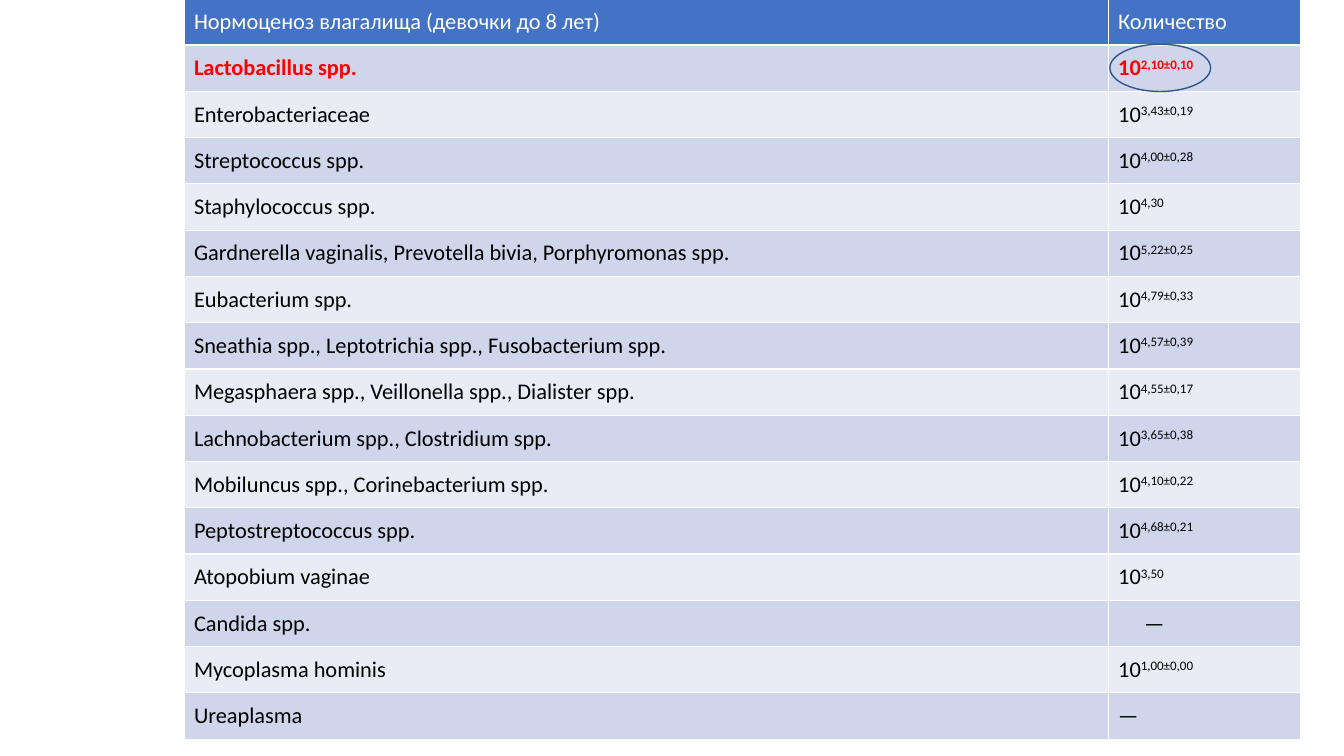
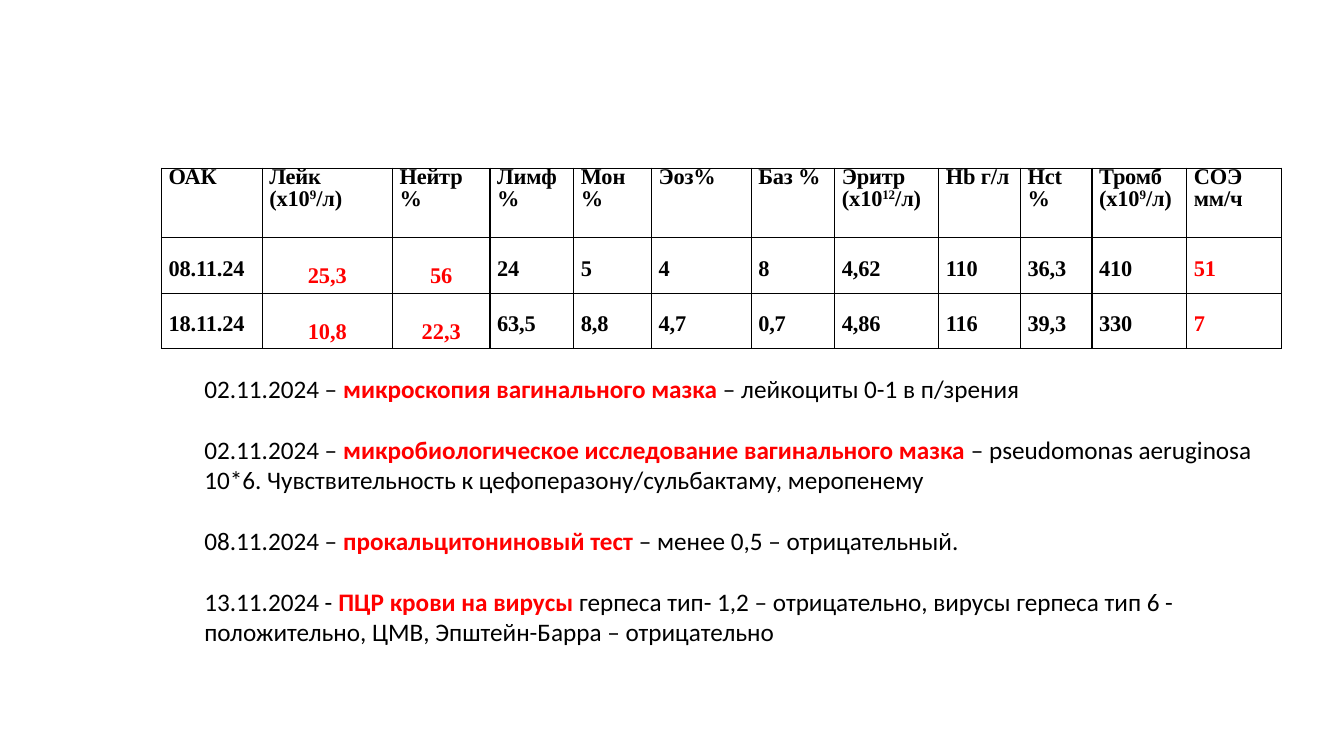
from dataclasses import dataclass

from lxml import etree
from pptx import Presentation
from pptx import util as u
from pptx.dml import color
from pptx.enum import shapes, text
from pptx.oxml import ns


@dataclass(frozen=True)
class Theme:
    """Colours, fonts and type sizes shared by the slides."""
    white: str = "FFFFFF"
    black: str = "000000"
    accent: str = "FF0000"
    header: str = "4472C4"
    bands: tuple = ("CFD5EA", "E9EBF5")
    outline: str = "325491"
    sans: str = "Calibri"
    serif: str = "Times New Roman"
    table_size: float = 16
    note_size: float = 18
    rule: float = 1


@dataclass(frozen=True)
class Box:
    """A region of the slide in centimetres."""
    left: float
    top: float
    width: float
    height: float

    def lengths(self):
        """Return the four edges as lengths."""
        return [u.Cm(side) for side in (self.left, self.top, self.width, self.height)]


THEME = Theme()
COUNT_WIDTH = 4.85
FLORA = [
    ("Lactobacillus spp.", "10^2,10±0,10"),
    ("Enterobacteriaceae", "10^3,43±0,19"),
    ("Streptococcus spp.", "10^4,00±0,28"),
    ("Staphylococcus spp.", "10^4,30"),
    ("Gardnerella vaginalis, Prevotella bivia, Porphyromonas spp.", "10^5,22±0,25"),
    ("Eubacterium spp.", "10^4,79±0,33"),
    ("Sneathia spp., Leptotrichia spp., Fusobacterium spp.", "10^4,57±0,39"),
    ("Megasphaera spp., Veillonella spp., Dialister spp.", "10^4,55±0,17"),
    ("Lachnobacterium spp., Clostridium spp.", "10^3,65±0,38"),
    ("Mobiluncus spp., Corinebacterium spp.", "10^4,10±0,22"),
    ("Peptostreptococcus spp.", "10^4,68±0,21"),
    ("Atopobium vaginae", "10^3,50"),
    ("Candida spp.", "—"),
    ("Mycoplasma hominis", "10^1,00±0,00"),
    ("Ureaplasma", "—"),
]
BLOOD_HEADINGS = ["ОАК", "Лейк (х10^9^/л)", "Нейтр%", "Лимф%", "Мон%", "Эоз%", "Баз %",
                  "Эритр (х10^12^/л)", "Hb г/л", "Нct %", "Тромб (х10^9^/л)", "СОЭ мм/ч"]
BLOOD_WIDTHS = [2.54, 3.28, 2.46, 2.11, 1.96, 2.51, 2.11, 2.62, 2.06, 1.8, 2.39, 2.39]
BLOOD_HEIGHTS = [1.75, 1.4, 1.4]
BLOOD_COUNTS = [
    ["08.11.24", "25,3", "56", "24", "5", "4", "8", "4,62", "110", "36,3", "410", "51"],
    ["18.11.24", "10,8", "22,3", "63,5", "8,8", "4,7", "0,7", "4,86", "116", "39,3", "330", "7"],
]
CENTRED = ("Лейк (х10^9^/л)", "Нейтр%")
ABNORMAL = CENTRED + ("СОЭ мм/ч",)
FINDINGS = [
    ("02.11.2024 – ", "микроскопия вагинального мазка ", "– лейкоциты 0-1 в п/зрения"),
    ("02.11.2024 – ", "микробиологическое исследование вагинального мазка ",
     "– pseudomonas aeruginosa 10*6. Чувствительность к цефоперазону/сульбактаму, меропенему"),
    ("08.11.2024 – ", "прокальцитониновый тест ", "– менее 0,5 – отрицательный."),
    ("13.11.2024 - ", "ПЦР крови на вирусы",
     " герпеса тип- 1,2 – отрицательно, вирусы герпеса тип 6 - положительно, "
     "ЦМВ, Эпштейн-Барра – отрицательно"),
]


def write(paragraph, content, size=THEME.table_size, font=THEME.sans, ink=THEME.black,
          bold=False, tracking=0):
    """Add formatted text, raising every second part between carets."""
    for index, part in enumerate(content.split("^")):
        run = paragraph.add_run()
        run.text = part
        run.font.size = u.Pt(size)
        run.font.name = font
        run.font.bold = bold
        run.font.color.rgb = color.RGBColor.from_string(ink)
        properties = run.font._element
        if index % 2:
            properties.set("baseline", "30000")
        if tracking:
            properties.set("spc", str(round(tracking * 100)))


def style_cell(cell, margins, border, fill=None):
    """Set the insets, the four borders and the fill of a cell."""
    side, top, bottom = margins
    cell.margin_left = cell.margin_right = u.Cm(side)
    cell.margin_top, cell.margin_bottom = u.Cm(top), u.Cm(bottom)
    properties = cell._tc.get_or_add_tcPr()
    for edge in ("lnL", "lnR", "lnT", "lnB"):
        line = etree.SubElement(properties, ns.qn(f"a:{edge}"), w=str(u.Pt(THEME.rule)))
        paint = etree.SubElement(line, ns.qn("a:solidFill"))
        etree.SubElement(paint, ns.qn("a:srgbClr"), val=border)
    if fill:
        cell.fill.solid()
        cell.fill.fore_color.rgb = color.RGBColor.from_string(fill)
    else:
        cell.fill.background()


def add_grid(slide, box, widths, heights):
    """Add an unstyled table with the given column widths and row heights."""
    table = slide.shapes.add_table(len(heights), len(widths), *box.lengths()).table
    table.first_row = table.horz_banding = False
    for column, width in zip(table.columns, widths):
        column.width = u.Cm(width)
    for row, height in zip(table.rows, heights):
        row.height = u.Cm(height)
    return table


def flora_table(slide, box):
    """Place the banded table of species and circle the first count."""
    rows = [("Нормоценоз влагалища (девочки до 8 лет)", "Количество")] + FLORA
    row_height = box.height / len(rows)
    name_width = box.width - COUNT_WIDTH
    table = add_grid(slide, box, [name_width, COUNT_WIDTH], [row_height] * len(rows))
    for r, row in enumerate(rows):
        fill = THEME.bands[(r - 1) % 2] if r else THEME.header
        ink = {0: THEME.white, 1: THEME.accent}.get(r, THEME.black)
        for c, content in enumerate(row):
            cell = table.cell(r, c)
            style_cell(cell, (0.25, 0.23, 0.23), THEME.white, fill)
            cell.vertical_anchor = text.MSO_ANCHOR.MIDDLE
            paragraph = cell.text_frame.paragraphs[0]
            write(paragraph, content, ink=ink, bold=r == 1)
            if row[0] == "Candida spp." and c == 1:
                paragraph._p.get_or_add_pPr().set("marL", str(u.Cm(0.65)))
    circle_count(slide, Box(box.left + name_width + 0.04, box.top + row_height - 0.02, 2.54, 1.19))


def circle_count(slide, box):
    """Draw the outlined ellipse around a count."""
    ellipse = slide.shapes.add_shape(shapes.MSO_SHAPE.OVAL, *box.lengths())
    ellipse.shadow.inherit = False
    ellipse.fill.background()
    ellipse.line.color.rgb = color.RGBColor.from_string(THEME.outline)
    ellipse.line.width = u.Pt(THEME.rule)


def blood_table(slide, box):
    """Place the table of blood counts by date."""
    table = add_grid(slide, box, BLOOD_WIDTHS, BLOOD_HEIGHTS)
    for r, row in enumerate([BLOOD_HEADINGS] + BLOOD_COUNTS):
        for c, (heading, content) in enumerate(zip(BLOOD_HEADINGS, row)):
            centred = r > 0 and heading in CENTRED
            top = 0 if r == 0 else 0.65 if centred else 0.55
            cell = table.cell(r, c)
            style_cell(cell, (0.18, top, 0), THEME.black)
            paragraph = cell.text_frame.paragraphs[0]
            if centred:
                paragraph.alignment = text.PP_ALIGN.CENTER
            else:
                paragraph.line_spacing = u.Pt(15.3)
            write(paragraph, content, font=THEME.serif, bold=True,
                  ink=THEME.accent if r and heading in ABNORMAL else THEME.black,
                  tracking=0 if centred else -0.1)


def findings_text(slide, box):
    """Place the dated findings with the name of each test in red."""
    frame = slide.shapes.add_textbox(*box.lengths()).text_frame
    frame.word_wrap = True
    for index, (date, test, result) in enumerate(FINDINGS):
        paragraph = frame.add_paragraph() if index else frame.paragraphs[0]
        paragraph.space_after = u.Pt(22 if index < len(FINDINGS) - 1 else 0)
        write(paragraph, date, size=THEME.note_size)
        write(paragraph, test, size=THEME.note_size, ink=THEME.accent, bold=True)
        write(paragraph, result, size=THEME.note_size)


def main():
    """Build the two slides and save the presentation."""
    deck = Presentation()
    deck.slide_width, deck.slide_height = u.Cm(33.87), u.Cm(19.05)
    blank = deck.slide_layouts[6]
    flora_table(deck.slides.add_slide(blank), Box(4.64, -0.03, 28.14, 18.66))
    blood_slide = deck.slides.add_slide(blank)
    blood_table(blood_slide, Box(4.07, 4.24, sum(BLOOD_WIDTHS), sum(BLOOD_HEIGHTS)))
    findings_text(blood_slide, Box(4.9, 9.27, 27.18, 7.19))
    deck.save("out.pptx")


if __name__ == "__main__":
    main()
